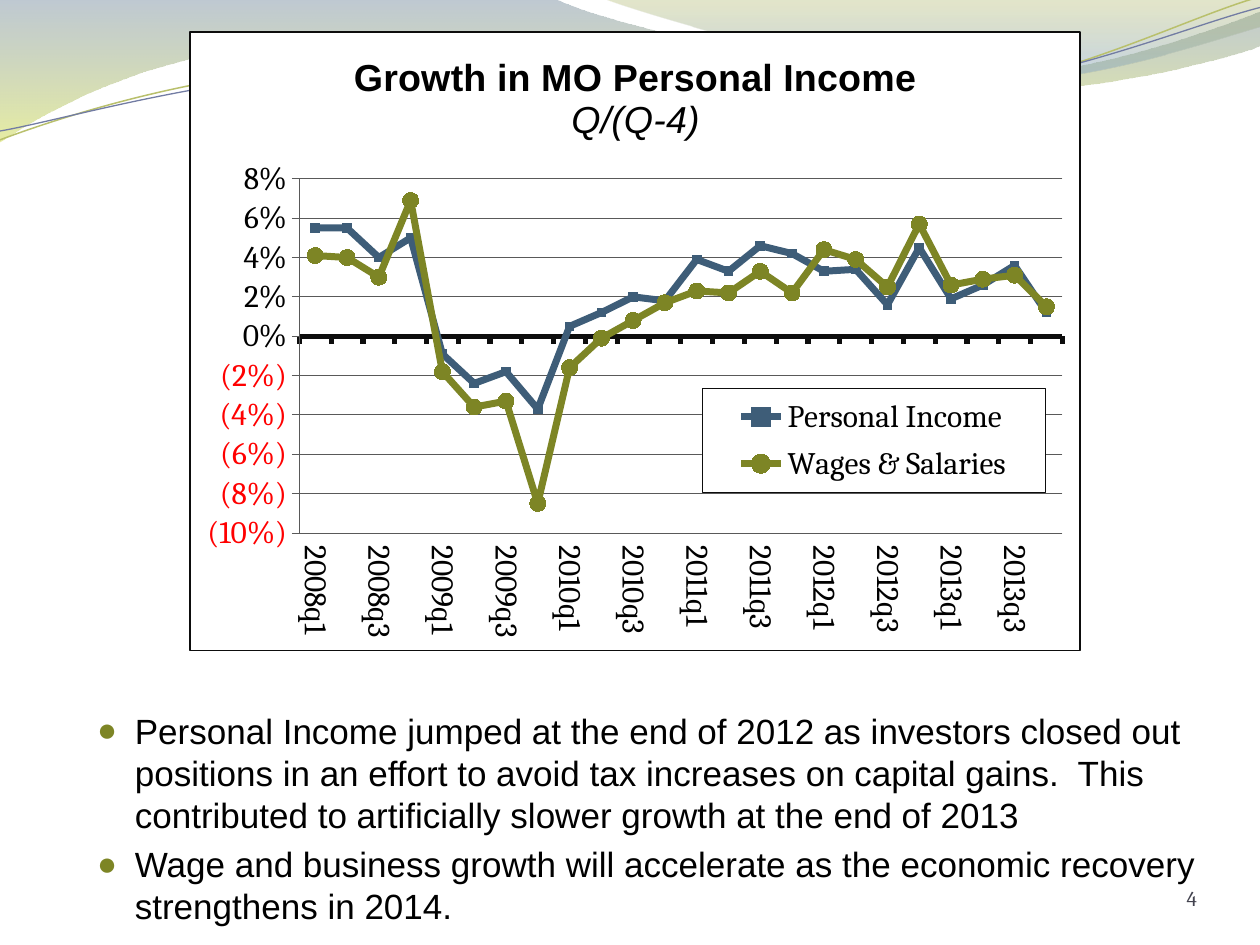
from dataclasses import dataclass
from math import cos, radians, sin

from lxml import etree
from pptx import Presentation
from pptx.chart.data import CategoryChartData
from pptx.dml.color import RGBColor
from pptx.enum.chart import (XL_CHART_TYPE, XL_LEGEND_POSITION, XL_MARKER_STYLE,
                             XL_TICK_LABEL_POSITION, XL_TICK_MARK)
from pptx.enum.text import MSO_ANCHOR, MSO_AUTO_SIZE, PP_ALIGN
from pptx.oxml import parse_xml
from pptx.oxml.ns import nsdecls, qn
from pptx.util import Inches, Pt

LINE_MARKERS = XL_CHART_TYPE.LINE_MARKERS
SQUARE, CIRCLE = XL_MARKER_STYLE.SQUARE, XL_MARKER_STYLE.CIRCLE
TOP, BOTTOM = MSO_ANCHOR.TOP, MSO_ANCHOR.BOTTOM
OUTSIDE, LOW = XL_TICK_MARK.OUTSIDE, XL_TICK_LABEL_POSITION.LOW


@dataclass
class Theme:
    sans: str = "Arial"
    serif: str = "Cambria"
    text: str = "000000"
    frame: str = "0D0D0D"
    paper: str = "FFFFFF"
    grid: str = "595959"
    blue: str = "3E5D78"
    olive: str = "7D8525"
    number: str = "43434F"
    body_size: float = 20
    chart_size: float = 18
    title_size: float = 21.6
    number_size: float = 12


THEME = Theme()

# Each wave: start point, then lines (one point) and Bezier curves (three points).
WAVE_WIDE = [(0, 0), [(4.4, -0.01)],
             [(4.76, 0.17), (6.64, 0.63), (7.58, 0.63)],
             [(8.53, 0.63), (9.58, 0.26), (10, 0.09)], [(10.01, 0.36)],
             [(9.83, 0.44), (8.7, 0.76), (7.46, 0.75)],
             [(6.22, 0.75), (3.82, 0.28), (2.57, 0.34)],
             [(1.29, 0.36), (0.46, 0.83), (-0.01, 1.13)], [(0, 0)]]
WAVE_RIGHT = [(4.79, -0.01), [(5.09, 0.11), (6.82, 0.62), (7.69, 0.65)],
              [(8.56, 0.69), (9.61, 0.32), (10, 0.21)], [(10, 0)], [(4.79, -0.01)]]
STRAND_GREEN = [(0, 1.11), [(0.48, 0.93), (1.58, 0.57), (2.77, 0.52)],
                [(3.95, 0.47), (5.93, 0.89), (7.13, 0.8)],
                [(8.33, 0.71), (9.38, 0.15), (9.98, -0.02)]]
STRAND_VIOLET = [(0, 1.04), [(0.47, 0.96), (1.64, 0.61), (2.83, 0.56)],
                 [(4.03, 0.51), (5.97, 0.84), (7.17, 0.75)],
                 [(8.36, 0.67), (9.41, 0.21), (10, 0.06)]]
TILT = -2.7

QUARTERS = [f"{year}q{q}" for year in range(2008, 2014) for q in range(1, 5)]
SERIES = [
    ("Personal Income", THEME.blue, SQUARE, 5,
     [0.055, 0.055, 0.04, 0.05, -0.009, -0.024, -0.018, -0.037, 0.005, 0.012, 0.02, 0.018,
      0.039, 0.033, 0.046, 0.042, 0.033, 0.034, 0.016, 0.045, 0.019, 0.026, 0.036, 0.012]),
    ("Wages & Salaries", THEME.olive, CIRCLE, 9,
     [0.041, 0.04, 0.03, 0.069, -0.018, -0.036, -0.033, -0.085, -0.016, -0.001, 0.008, 0.017,
      0.023, 0.022, 0.033, 0.022, 0.044, 0.039, 0.025, 0.057, 0.026, 0.029, 0.031, 0.015]),
]
BULLETS = [
    "Personal Income jumped at the end of 2012 as investors closed out positions in an effort "
    "to avoid tax increases on capital gains.  This contributed to artificially slower growth "
    "at the end of 2013",
    "Wage and business growth will accelerate as the economic recovery strengthens in 2014.",
]


def rgb(value):
    return RGBColor.from_string(value)


def set_all(obj, **values):
    for name, value in values.items():
        setattr(obj, name, value)


def set_font(font, face, size, color, **extra):
    set_all(font, name=face, size=Pt(size), **extra)
    font.color.rgb = rgb(color)


def set_line(line, color, width):
    line.color.rgb = rgb(color)
    line.width = Pt(width)


def turn(point, center, degrees):
    """Turn a point clockwise about a center."""
    a, dx, dy = radians(degrees), point[0] - center[0], point[1] - center[1]
    return center[0] + dx * cos(a) - dy * sin(a), center[1] + dx * sin(a) + dy * cos(a)


def place(part, index, inner=False, **box):
    """Give a chart part a manual layout, in fractions of the chart."""
    old = part.find(qn("c:layout"))
    if old is not None:
        part.remove(old)
    values = {"layoutTarget": "inner"} if inner else {}
    values |= {"xMode": "edge", "yMode": "edge"} | box
    items = "".join(f'<c:{name} val="{value}"/>' for name, value in values.items())
    part.insert(index, parse_xml(f'<c:layout {nsdecls("c")}><c:manualLayout>{items}'
                                 '</c:manualLayout></c:layout>'))


def frame_part(part, theme, width):
    """Fill and outline a chart part that already has text properties."""
    part.find(qn("c:txPr")).addprevious(parse_xml(
        f'<c:spPr {nsdecls("c", "a")}><a:solidFill><a:srgbClr val="{theme.paper}"/></a:solidFill>'
        f'<a:ln w="{Pt(width)}"><a:solidFill><a:srgbClr val="{theme.frame}"/></a:solidFill></a:ln>'
        '</c:spPr>'))


class Deck:
    """Holds the theme and the current slide."""

    def __init__(self, theme):
        self.theme = theme
        self.prs = Presentation()
        set_all(self.prs, slide_width=Inches(10), slide_height=Inches(7.5))
        self.s = self.prs.slides.add_slide(self.prs.slide_layouts[1])
        title = self.s.shapes.title.element
        title.getparent().remove(title)

    def outline(self, start, segments, closed):
        """Build the knots as lines, then join each three of a curve into one Bezier."""
        builder = self.s.shapes.build_freeform(*map(Inches, start))
        builder.add_line_segments([tuple(map(Inches, pt)) for seg in segments for pt in seg],
                                  close=closed)
        sp = builder.convert_to_shape()
        sp.shadow.inherit = False
        knots = iter(list(sp.element.iter(qn("a:lnTo"))))
        for seg in segments:
            steps = [next(knots) for _ in seg]
            if len(steps) == 3:
                curve = etree.Element(qn("a:cubicBezTo"))
                steps[0].addprevious(curve)
                for step in steps:
                    curve.append(step[0])
                    step.getparent().remove(step)
        return sp

    def wave(self, points, stops):
        """Closed shape with a downward gradient of (position, colour, opacity)."""
        sp = self.outline(points[0], points[1:], True)
        sp.line.fill.background()
        sp.fill.gradient()
        sp.fill.gradient_angle = 270
        for stop, (position, color, _) in zip(sp.fill.gradient_stops, stops):
            stop.position = position
            stop.color.rgb = rgb(color)
        for clr, (_, _, opacity) in zip(sp.element.iter(qn("a:srgbClr")), stops):
            etree.SubElement(clr, qn("a:alpha"), val=str(opacity * 1000))

    def strand(self, points, center, color, width):
        """Open curve whose frame is tilted about its center."""
        start, *segments = points
        level = [[turn(pt, center, -TILT) for pt in seg] for seg in segments]
        sp = self.outline(turn(start, center, -TILT), level, False)
        sp.rotation = TILT
        sp.fill.background()
        set_line(sp.line, color, width)

    def bullets(self, items, *box):
        sp = self.s.placeholders[1]
        set_all(sp, **dict(zip(("left", "top", "width", "height"), map(Inches, box))))
        tf = sp.text_frame
        set_all(tf, text="\n".join(items), vertical_anchor=TOP, auto_size=MSO_AUTO_SIZE.NONE)
        for p in tf.paragraphs:
            p.space_before = Pt(4)
            set_font(p.runs[0].font, self.theme.sans, self.theme.body_size, self.theme.text)
            pPr = p._p.get_or_add_pPr()
            pPr.set("marL", str(Inches(0.3)))
            pPr.set("indent", str(-Inches(0.3)))
            color = etree.SubElement(pPr, qn("a:buClr"))
            etree.SubElement(color, qn("a:srgbClr"), val=self.theme.olive)
            etree.SubElement(pPr, qn("a:buSzPct"), val="95000")
            etree.SubElement(pPr, qn("a:buChar"), char="●")

    def line_chart(self, *box):
        th = self.theme
        data = CategoryChartData(number_format="0.0%")
        data.categories = QUARTERS
        for name, *_, values in SERIES:
            data.add_series(name, values)
        chart = self.s.shapes.add_chart(LINE_MARKERS, *map(Inches, box), data).chart
        set_font(chart.font, th.serif, th.chart_size, th.text)
        frame_part(chart.element, th, 1)
        plot_area = chart.element.find(".//" + qn("c:plotArea"))
        place(plot_area, 0, True, x=0.123, y=0.237, w=0.857, h=0.573)

        tf = chart.chart_title.text_frame
        tf.text = "Growth in MO Personal Income\nQ/(Q-4)"
        for p, bold in zip(tf.paragraphs, (True, False)):
            set_font(p.runs[0].font, th.sans, th.title_size, th.text, bold=bold, italic=not bold)
        place(chart.chart_title._element, 1, x=0.18, y=0.03)

        chart.has_legend = True
        set_all(chart.legend, position=XL_LEGEND_POSITION.LEFT, include_in_layout=True)
        set_font(chart.legend.font, th.serif, th.chart_size, th.text)
        frame_part(chart.legend._element, th, 0.25)
        place(chart.legend._element, 1, x=0.575, y=0.576, w=0.386, h=0.168)

        cat, val = chart.category_axis, chart.value_axis
        set_all(cat, tick_label_position=LOW, major_tick_mark=OUTSIDE, has_major_gridlines=False)
        set_line(cat.format.line, th.frame, 3)
        set_font(cat.tick_labels.font, th.serif, th.chart_size, th.text)
        cat._element.find(qn("c:txPr")).find(qn("a:bodyPr")).set("rot", "5400000")
        skip = parse_xml(f'<c:tickLblSkip {nsdecls("c")} val="2"/>')
        cat._element.find(qn("c:noMultiLvlLbl")).addprevious(skip)
        set_all(val, minimum_scale=-0.1, maximum_scale=0.08, major_unit=0.02,
                major_tick_mark=OUTSIDE, has_major_gridlines=True)
        set_all(val.tick_labels, number_format=r"0%;[Red]\(0%\)", number_format_is_linked=False)
        for line in (val.format.line, val.major_gridlines.format.line):
            set_line(line, th.grid, 0.5)

        for series, (_, color, style, size, _) in zip(chart.plots[0].series, SERIES):
            series.smooth = False
            set_line(series.format.line, color, 4)
            set_all(series.marker, style=style, size=size)
            series.marker.format.fill.solid()
            series.marker.format.fill.fore_color.rgb = rgb(color)
            series.marker.format.line.fill.background()

    def page_number(self, text, *box):
        tf = self.s.shapes.add_textbox(*map(Inches, box)).text_frame
        set_all(tf, word_wrap=True, vertical_anchor=BOTTOM, text=text,
                margin_left=0, margin_top=0, margin_right=0, margin_bottom=0)
        p = tf.paragraphs[0]
        p.alignment = PP_ALIGN.RIGHT
        set_font(p.runs[0].font, self.theme.serif, self.theme.number_size, self.theme.number)


def main():
    deck = Deck(THEME)
    deck.wave(WAVE_WIDE, [(0, "72889B", 45), (1, "D3DE57", 55)])
    deck.wave(WAVE_RIGHT, [(0, "A4AC50", 30), (0.8, "84A3BD", 45)])
    deck.strand(STRAND_GREEN, (4.99, 0.58), "B9C06C", 0.85)
    deck.strand(STRAND_VIOLET, (5, 0.59), "727CA3", 0.75)
    deck.bullets(BULLETS, 0.67, 5.58, 8.93, 1.5)
    deck.line_chart(1.5, 0.25, 7.08, 4.92)
    deck.page_number("4", 8.67, 6.83, 0.83, 0.4)
    deck.prs.save("out.pptx")


if __name__ == "__main__":
    main()
